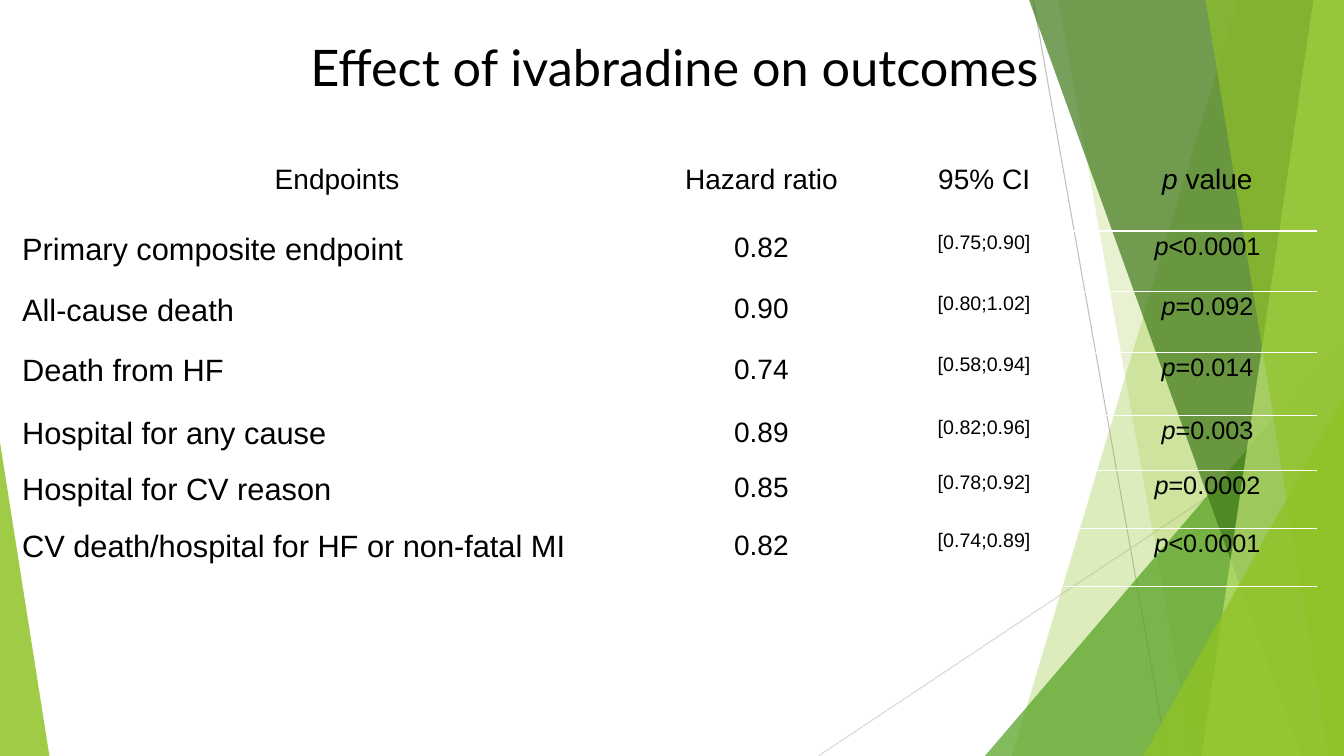
from typing import NamedTuple

from lxml.etree import SubElement
from pptx import Presentation
from pptx.dml.color import RGBColor
from pptx.enum.shapes import MSO_CONNECTOR, MSO_SHAPE
from pptx.enum.text import MSO_ANCHOR, MSO_AUTO_SIZE, PP_ALIGN
from pptx.oxml.ns import qn
from pptx.util import Pt


class Box(NamedTuple):
    """A rectangle in points."""
    left: float
    top: float
    width: float
    height: float


PAGE = Box(0, 0, 960, 540)
TITLE = Box(214.5, 22.3, 727.2, 36.7)
TABLE = Box(15.8, 116, 925.2, 302.8)
NO_STYLE = "{2D5ABB26-0587-4C30-8999-92F81FD0307C}"
LIME, GREEN, FOREST, PALE = "90C226", "54A021", "3F7819", "C0E474"
WHITE, BLACK = "FFFFFF", "000000"

COLUMN_WIDTHS = [450, 156.2, 162, 157]
ROW_HEIGHTS = [49, 43.4, 43.2, 45, 39.6, 41.2, 41.4]
HEADER_SIZES = [20, 20, 20, 20]
BODY_SIZES = [22, 20, 14, 18]
ROWS = [
    ("Endpoints", "Hazard ratio", "95% CI", "p value"),
    ("Primary composite endpoint", "0.82", "[0.75;0.90]", "p<0.0001"),
    ("All-cause death", "0.90", "[0.80;1.02]", "p=0.092"),
    ("Death from HF", "0.74", "[0.58;0.94]", "p=0.014"),
    ("Hospital for any cause", "0.89", "[0.82;0.96]", "p=0.003"),
    ("Hospital for CV reason", "0.85", "[0.78;0.92]", "p=0.0002"),
    ("CV death/hospital for HF or non-fatal MI", "0.82", "[0.74;0.89]", "p<0.0001"),
]


def color(value):
    """Turn a hex string into a colour."""
    return RGBColor.from_string(value)


def write(para, text, size, font="Arial", italic=False):
    """Add a formatted span of text to a paragraph."""
    span = para.add_run()
    span.text = text
    span.font.size = Pt(size)
    span.font.name = font
    span.font.italic = italic
    span.font.color.rgb = color(BLACK)


def paint(shape, fill, opacity):
    """Give a shape a translucent fill without line or shadow."""
    shape.shadow.inherit = False
    shape.line.fill.background()
    shape.fill.solid()
    shape.fill.fore_color.rgb = color(fill)
    hue = shape.fill._xPr.find(qn("a:solidFill"))[0]
    SubElement(hue, qn("a:alpha"), val=str(opacity * 1000))


def add_line(page, start, end, stroke):
    """Draw a thin straight line."""
    line = page.shapes.add_connector(
        MSO_CONNECTOR.STRAIGHT, *map(Pt, start), *map(Pt, end))
    line.line.color.rgb = color(stroke)
    line.line.width = Pt(0.75)
    SubElement(line._element.spPr, qn("a:effectLst"))


def add_panel(page, box, top_x, bottom_x, fill, opacity):
    """Fill the area from a slanted edge to the right side of the box."""
    right, bottom = box.left + box.width, box.top + box.height
    builder = page.shapes.build_freeform(Pt(box.left + top_x), Pt(box.top), scale=1)
    corners = [(right, box.top), (right, bottom), (box.left + bottom_x, bottom)]
    builder.add_line_segments([(Pt(x), Pt(y)) for x, y in corners], close=True)
    paint(builder.convert_to_shape(), fill, opacity)


def add_corner(page, box, width, height, apex, fill, opacity):
    """Put a right triangle in a bottom corner, with apex 0 left or 1 right."""
    left = box.left + apex * (box.width - width)
    top = box.top + box.height - height
    shape = page.shapes.add_shape(
        MSO_SHAPE.ISOSCELES_TRIANGLE, Pt(left), Pt(top), Pt(width), Pt(height))
    shape.adjustments[0] = apex
    paint(shape, fill, opacity)


def add_backdrop(page, box):
    """Layer the green facets along the sides of the box."""
    right, bottom = box.left + box.width, box.top + box.height
    add_line(page, (box.left + 738, box.top), (box.left + 833.8, bottom), "BFBFBF")
    add_line(page, (right, box.top + 290.2), (box.left + 584.6, bottom), "D9D9D9")
    add_panel(page, box, 884.2, 722.9, LIME, 30)
    add_panel(page, box, 756, 851.8, LIME, 20)
    add_corner(page, box, 256.5, 300, 1, GREEN, 72)
    add_panel(page, box, 735.1, 929.5, FOREST, 70)
    add_panel(page, box, 938.2, 858.2, PALE, 70)
    add_panel(page, box, 861.1, 949, LIME, 65)
    add_corner(page, box, 143.3, 257, 1, LIME, 80)
    add_corner(page, box, 35.3, 224, 0, LIME, 85)


def add_title(page, box, text):
    """Place the title placeholder above the backdrop."""
    title = page.shapes.title
    page.shapes._spTree.append(title._element)
    title.left, title.top, title.width, title.height = map(Pt, box)
    frame = title.text_frame
    frame.auto_size = MSO_AUTO_SIZE.NONE
    frame.vertical_anchor = MSO_ANCHOR.TOP
    para = frame.paragraphs[0]
    para.alignment = PP_ALIGN.LEFT
    write(para, text, 36, font="Lato")


def add_border(cell, side):
    """Draw a white line on one side of a cell."""
    edge = SubElement(cell._tc.get_or_add_tcPr(), qn("a:" + side), w=str(Pt(1)))
    fill = SubElement(edge, qn("a:solidFill"))
    SubElement(fill, qn("a:srgbClr"), val=WHITE)


def fill_cell(cell, text, size, column, sides):
    """Write one table cell, with the p of a p value in italics."""
    cell.margin_left = cell.margin_top = cell.margin_right = 0
    cell.margin_bottom = Pt(6)
    cell.vertical_anchor = MSO_ANCHOR.TOP
    for side in sides:
        add_border(cell, side)
    cell.fill.background()
    para = cell.text_frame.paragraphs[0]
    para.line_spacing = 1.05
    centred = column > 0 or text == ROWS[0][0]
    para.alignment = PP_ALIGN.CENTER if centred else PP_ALIGN.LEFT
    if column == 3:
        write(para, text[0], size, italic=True)
        text = text[1:]
    write(para, text, size)


def add_outcomes(page, box):
    """Build the table of endpoints in the box."""
    frame = page.shapes.add_table(len(ROWS), len(COLUMN_WIDTHS), *map(Pt, box))
    table = frame.table
    table.first_row = table.horz_banding = False
    table._tbl.tblPr.find(qn("a:tableStyleId")).text = NO_STYLE
    for column, width in zip(table.columns, COLUMN_WIDTHS):
        column.width = Pt(width)
    for index, (row, height, texts) in enumerate(zip(table.rows, ROW_HEIGHTS, ROWS)):
        row.height = Pt(height)
        sizes = BODY_SIZES if index else HEADER_SIZES
        sides = ["lnT", "lnB"] if index else ["lnB"]
        for column, (text, size) in enumerate(zip(texts, sizes)):
            fill_cell(table.cell(index, column), text, size, column, sides)


def main():
    """Build and save the deck."""
    deck = Presentation()
    deck.slide_width, deck.slide_height = Pt(PAGE.width), Pt(PAGE.height)
    page = deck.slides.add_slide(deck.slide_layouts[5])
    add_backdrop(page, PAGE)
    add_title(page, TITLE, "Effect of ivabradine on outcomes")
    add_outcomes(page, TABLE)
    deck.save("out.pptx")


if __name__ == "__main__":
    main()
